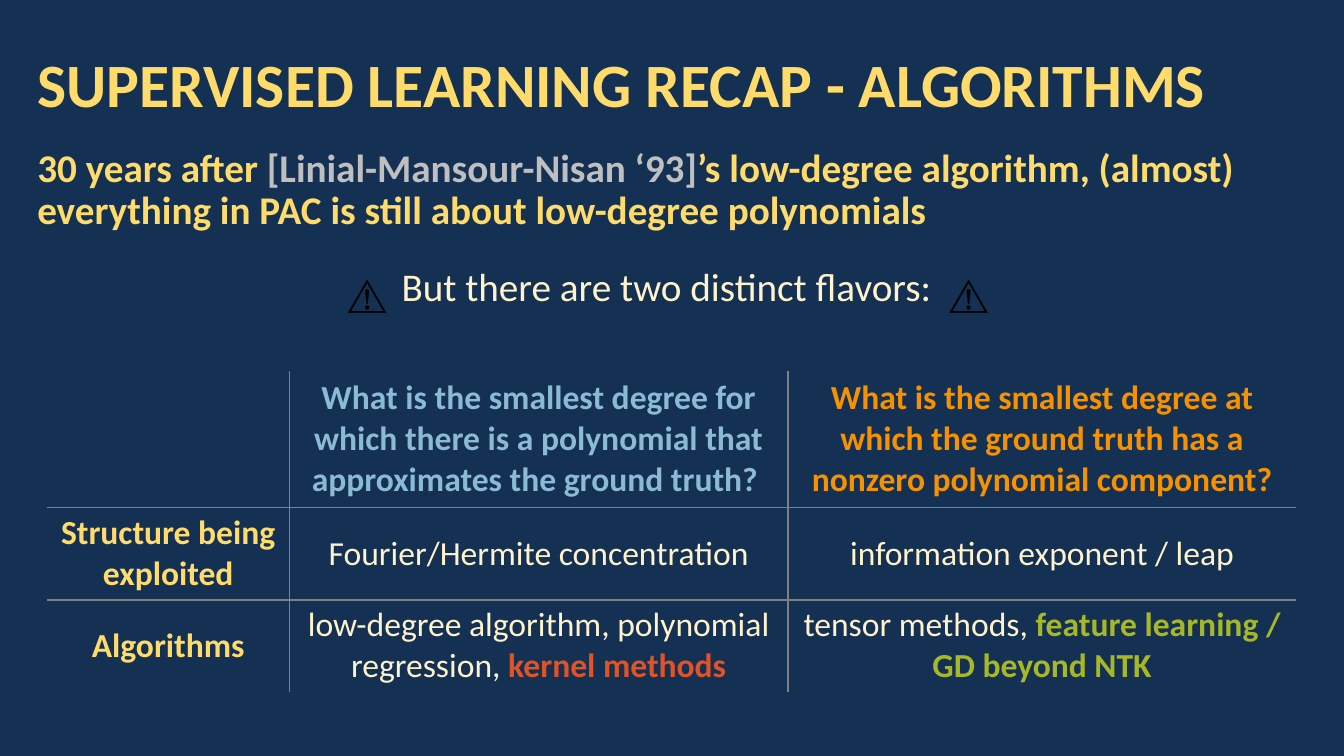
from dataclasses import dataclass

from lxml.etree import SubElement
from pptx import Presentation
from pptx.dml.color import RGBColor
from pptx.enum.text import MSO_ANCHOR as Anchor, PP_ALIGN as Align
from pptx.oxml.ns import qn
from pptx.util import Cm, Pt


@dataclass(frozen=True)
class Theme:
    font: str = "Calibri"
    background: str = "143053"
    heading: str = "FEDB6A"
    body: str = "FFF3CD"
    citation: str = "BFBFBF"
    approximation: str = "8ABAD4"
    component: str = "F69200"
    kernel: str = "DF5327"
    feature: str = "A6B727"
    symbol: str = "000000"
    border: str = "808080"
    title_size: int = 44
    text_size: int = 28
    table_size: int = 24


theme = Theme()


def write_runs(paragraph, runs, size, **formats):
    """Set paragraph formats, then add (text, colour, bold) runs."""
    for name, value in formats.items():
        setattr(paragraph, name, value)
    for text, color, bold in runs:
        run = paragraph.add_run()
        run.text = text
        for name, value in {"name": theme.font, "size": Pt(size), "bold": bold}.items():
            setattr(run.font, name, value)
        run.font.color.rgb = RGBColor.from_string(color)


def add_text_frame(left, top, width, height, anchor=Anchor.TOP):
    box = slide.shapes.add_textbox(Cm(left), Cm(top), Cm(width), Cm(height))
    box.text_frame.word_wrap = True
    box.text_frame.vertical_anchor = anchor
    return box.text_frame


presentation = Presentation()
presentation.slide_width = Cm(33.87)
presentation.slide_height = Cm(19.05)
slide = presentation.slides.add_slide(presentation.slide_layouts[6])
slide.background.fill.solid()
slide.background.fill.fore_color.rgb = RGBColor.from_string(theme.background)

# Title
title = add_text_frame(0.69, 0.79, 32.51, 2.82, Anchor.MIDDLE)
write_runs(
    title.paragraphs[0],
    [("SUPERVISED LEARNING RECAP - ALGORITHMS", theme.heading, True)],
    theme.title_size,
    line_spacing=0.9,
)

# Claim and lead-in to the table
claim = add_text_frame(0.69, 3.61, 31.09, 5)
write_runs(
    claim.paragraphs[0],
    [
        ("30 years after ", theme.heading, True),
        ("[Linial-Mansour-Nisan ‘93]", theme.citation, True),
        ("’s low-degree algorithm, (almost) everything in PAC is still about "
         "low-degree polynomials", theme.heading, True),
    ],
    theme.text_size,
    line_spacing=0.9,
)
lead_in = claim.add_paragraph()
lead_in._p.get_or_add_pPr().set("marL", str(Cm(1.12)))
write_runs(
    lead_in,
    [("But there are two distinct flavors:", theme.body, False)],
    theme.text_size,
    line_spacing=0.9,
    space_before=Pt(24.5),
    alignment=Align.CENTER,
)

# Warning signs on both sides of the lead-in
for left in (8.51, 23.67):
    warning = add_text_frame(left, 6.68, 1.68, 1.45)
    write_runs(warning.paragraphs[0], [("⚠️", theme.symbol, False)], theme.text_size)

# Comparison table
rows = [
    [
        [],
        [("What is the smallest degree for which there is a polynomial that "
          "approximates the ground truth? ", theme.approximation, True)],
        [("What is the smallest degree at which the ground truth has a nonzero "
          "polynomial component?", theme.component, True)],
    ],
    [
        [("Structure being exploited", theme.heading, True)],
        [("Fourier/Hermite concentration", theme.body, False)],
        [("information exponent / leap", theme.body, False)],
    ],
    [
        [("Algorithms", theme.heading, True)],
        [("low-degree algorithm, polynomial regression, ", theme.body, False),
         ("kernel methods", theme.kernel, True)],
        [("tensor methods, ", theme.body, False),
         ("feature learning / GD beyond NTK", theme.feature, True)],
    ],
]
column_widths = (6.1, 12.57, 12.8)
row_heights = (3.43, 2.34, 2.31)
table = slide.shapes.add_table(
    len(rows), len(column_widths),
    Cm(1.19), Cm(9.35), Cm(sum(column_widths)), Cm(sum(row_heights)),
).table
table.first_row = False
table.horz_banding = False
for column, width in zip(table.columns, column_widths):
    column.width = Cm(width)
for row, height in zip(table.rows, row_heights):
    row.height = Cm(height)

last_row, last_column = len(row_heights) - 1, len(column_widths) - 1
for row_index, row in enumerate(rows):
    for column_index, runs in enumerate(row):
        cell = table.cell(row_index, column_index)
        cell.vertical_anchor = Anchor.MIDDLE
        write_runs(cell.text_frame.paragraphs[0], runs, theme.table_size,
                   alignment=Align.CENTER)
        # Only the edges between cells carry a line
        inner_edges = {
            "a:lnL": column_index > 0,
            "a:lnR": column_index < last_column,
            "a:lnT": row_index > 0,
            "a:lnB": row_index < last_row,
        }
        properties = cell._tc.get_or_add_tcPr()
        for tag, is_inner in inner_edges.items():
            edge = SubElement(properties, qn(tag), w=str(Pt(1)))
            if is_inner:
                fill = SubElement(edge, qn("a:solidFill"))
                SubElement(fill, qn("a:srgbClr"), val=theme.border)
            else:
                SubElement(edge, qn("a:noFill"))
        cell.fill.background()

presentation.save("out.pptx")
